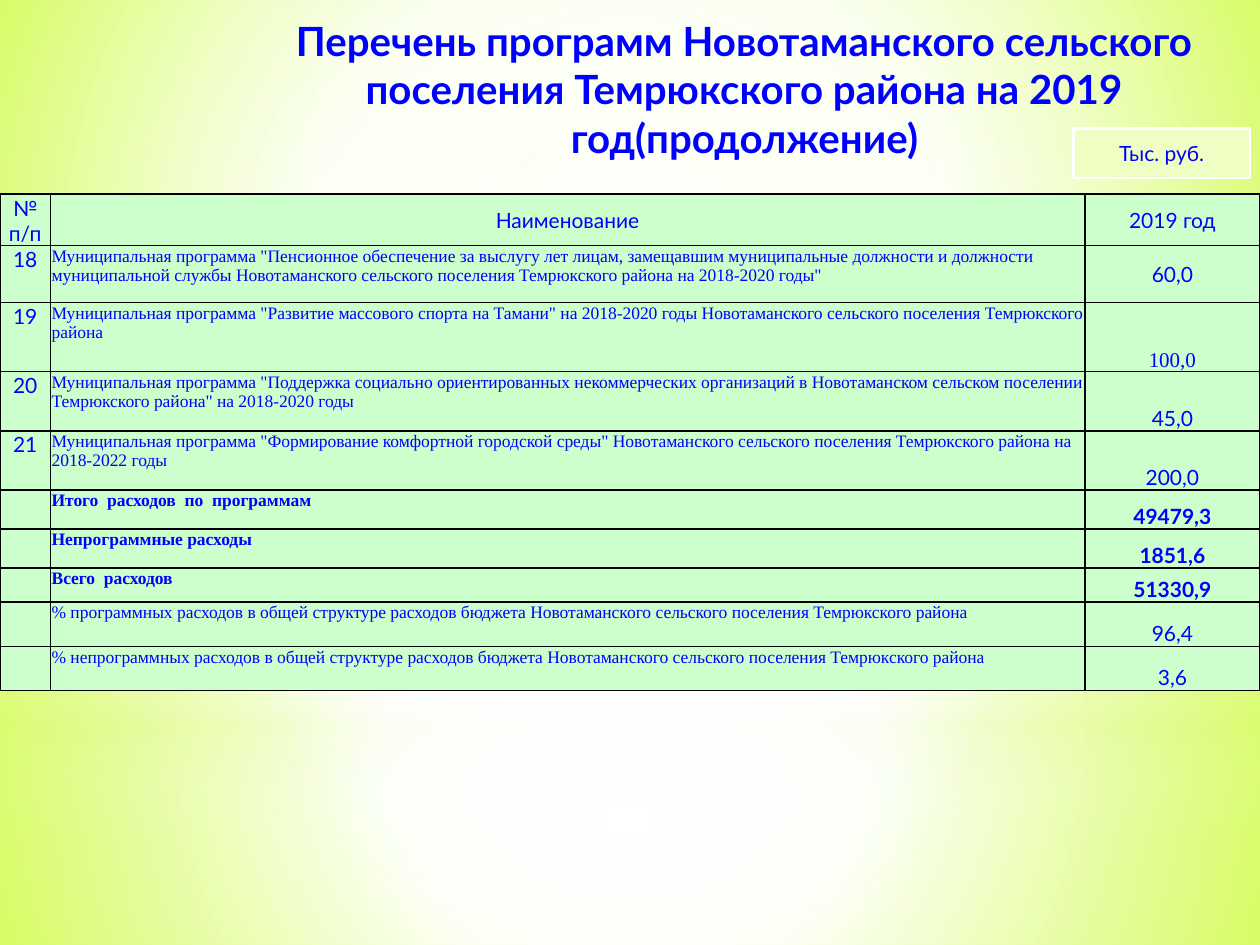
"""Build the slide listing the 2019 settlement programmes and their costs."""
from pptx import Presentation
from pptx.dml.color import RGBColor
from pptx.enum.shapes import MSO_SHAPE
from pptx.enum.text import MSO_ANCHOR, MSO_AUTO_SIZE, PP_ALIGN
from pptx.oxml import parse_xml
from pptx.oxml.ns import nsdecls
from pptx.util import Inches, Pt

BLUE = "0000FF"
WHITE = "FFFFFF"
LIME = "D8FC68"
MINT = "CCFFCC"


def color(value):
    return RGBColor.from_string(value)


def set_gradient(element, stops, focus=None):
    stop_xml = "".join(
        f'<a:gs pos="{position * 1000}"><a:srgbClr val="{value}">'
        f'<a:alpha val="{opacity * 1000}"/></a:srgbClr></a:gs>'
        for position, value, opacity in stops
    )
    if focus:
        left, top, right, bottom = (edge * 1000 for edge in focus)
        shade = (f'<a:path path="circle"><a:fillToRect l="{left}" t="{top}" '
                 f'r="{right}" b="{bottom}"/></a:path>')
    else:
        shade = '<a:lin ang="5400000" scaled="0"/>'
    solid = element.xpath(".//a:solidFill")[0]
    solid.getparent().replace(solid, parse_xml(
        f'<a:gradFill {nsdecls("a")} rotWithShape="1"><a:gsLst>{stop_xml}</a:gsLst>{shade}</a:gradFill>'))


presentation = Presentation()
presentation.slide_width = Inches(10)
presentation.slide_height = Inches(7.5)
slide = presentation.slides.add_slide(presentation.slide_layouts[5])
slide.background.fill.solid()
slide.background.fill.fore_color.rgb = color(WHITE)
set_gradient(slide.element,
             [(0, "D6FF5B", 100), (60, "F8FFE3", 100), (100, "C9FF25", 100)],
             (20, 10, 20, 60))

center = (50, 50, 50, 50)
band_stops = [(0, WHITE, 0), (29, WHITE, 30), (45, LIME, 40),
              (55, WHITE, 26), (65, LIME, 60), (100, WHITE, 0)]
for horizon, band_top, extra, glow_edge in [(5.58, 4.12, 0, 56), (4.23, 2.9, 1, 54)]:
    lower_stops = [(0, WHITE, 91 + extra), (37, WHITE, 76 + extra), (100, LIME, 79 + extra)]
    upper_stops = [(0, WHITE, 89 + extra), (48, WHITE, 62 + extra), (100, LIME, 79 + extra)]
    glow_stops = [(0, WHITE, 100), (glow_edge, WHITE, 0)]
    for kind, top, height, stops, focus in [
        (MSO_SHAPE.RECTANGLE, horizon, 7.5 - horizon, lower_stops, center),
        (MSO_SHAPE.RECTANGLE, 0, horizon, upper_stops, center),
        (MSO_SHAPE.RECTANGLE, band_top, 2.5, band_stops, None),
        (MSO_SHAPE.OVAL, 1.75, 5.58, glow_stops, center),
    ]:
        layer = slide.shapes.add_shape(kind, 0, Inches(top), Inches(10), Inches(height))
        layer.shadow.inherit = False
        layer.line.fill.background()
        layer.fill.solid()
        layer.fill.fore_color.rgb = color(WHITE)
        set_gradient(layer.element, stops, focus)

title = slide.shapes.title
slide.shapes.element.append(title.element)
title.left, title.top = Inches(2.09), Inches(0)
title.width, title.height = Inches(7.64), Inches(1.33)
title.text = "Перечень программ Новотаманского сельского поселения Темрюкского района на 2019 год(продолжение)"
title.text_frame.word_wrap = True
title.text_frame.auto_size = MSO_AUTO_SIZE.NONE
title.text_frame.vertical_anchor = MSO_ANCHOR.BOTTOM
paragraph = title.text_frame.paragraphs[0]
paragraph.alignment = PP_ALIGN.CENTER
paragraph.font.name = "Lato"
paragraph.font.size = Pt(23)
paragraph.font.bold = True
paragraph.font.color.rgb = color(BLUE)

rows = [
    (0.41, "№ п/п", "Наименование", "2019 год"),
    (0.45, "18", 'Муниципальная программа "Пенсионное обеспечение за выслугу лет лицам, замещавшим муниципальные должности и должности муниципальной службы Новотаманского сельского поселения Темрюкского района на 2018-2020 годы"', "60,0"),
    (0.55, "19", 'Муниципальная программа "Развитие массового спорта на Тамани" на 2018-2020 годы Новотаманского сельского поселения Темрюкского района', "100,0"),
    (0.47, "20", 'Муниципальная программа "Поддержка социально ориентированных некоммерческих организаций в Новотаманском сельском поселении Темрюкского района" на 2018-2020 годы', "45,0"),
    (0.47, "21", 'Муниципальная программа "Формирование комфортной городской среды" Новотаманского сельского поселения Темрюкского района на 2018-2022 годы', "200,0"),
    (0.31, "", "Итого  расходов  по  программам", "49479,3"),
    (0.31, "", "Непрограммные расходы", "1851,6"),
    (0.27, "", "Всего  расходов", "51330,9"),
    (0.35, "", "% программных расходов в общей структуре расходов бюджета Новотаманского сельского поселения Темрюкского района", "96,4"),
    (0.35, "", "% непрограммных расходов в общей структуре расходов бюджета Новотаманского сельского поселения Темрюкского района", "3,6"),
]
total_rows = (5, 6, 7)
serif_value_row = 2
table = slide.shapes.add_table(len(rows), 3, 0, Inches(1.54), Inches(10), Inches(3.94)).table
for column, width in zip(table.columns, (0.4, 8.21, 1.39)):
    column.width = Inches(width)

for row_index, (height, *texts) in enumerate(rows):
    table.rows[row_index].height = Inches(height)
    for column_index, text in enumerate(texts):
        is_name = row_index > 0 and column_index == 1
        is_value = column_index == 2
        cell = table.cell(row_index, column_index)
        cell.text = text
        cell.margin_left = cell.margin_top = cell.margin_right = Inches(0.01)
        cell.margin_bottom = 0
        if row_index == 0 or (row_index == 1 and is_value):
            cell.vertical_anchor = MSO_ANCHOR.MIDDLE
        else:
            cell.vertical_anchor = MSO_ANCHOR.BOTTOM if is_value else MSO_ANCHOR.TOP
        paragraph = cell.text_frame.paragraphs[0]
        paragraph.alignment = PP_ALIGN.LEFT if is_name else PP_ALIGN.CENTER
        is_serif = is_name or (is_value and row_index == serif_value_row)
        paragraph.font.name = "Times New Roman" if is_serif else "Lato"
        paragraph.font.size = Pt(10 if is_name else 12)
        paragraph.font.bold = row_index in total_rows
        paragraph.font.color.rgb = color(BLUE)
        properties = cell._tc.get_or_add_tcPr()
        for side in ("lnL", "lnR", "lnT", "lnB"):
            properties.append(parse_xml(
                f'<a:{side} {nsdecls("a")} w="12700"><a:solidFill>'
                f'<a:srgbClr val="000000"/></a:solidFill></a:{side}>'))
        cell.fill.solid()
        cell.fill.fore_color.rgb = color(MINT)

unit_label = slide.shapes.add_shape(
    MSO_SHAPE.RECTANGLE, Inches(8.52), Inches(1.02), Inches(1.4), Inches(0.39))
unit_label.shadow.inherit = False
unit_label.fill.solid()
unit_label.fill.fore_color.rgb = color("EFFEC3")
unit_label.line.color.rgb = color(WHITE)
unit_label.line.width = Pt(1.25)
unit_label.text_frame.text = "Тыс. руб."
unit_label.text_frame.vertical_anchor = MSO_ANCHOR.MIDDLE
paragraph = unit_label.text_frame.paragraphs[0]
paragraph.alignment = PP_ALIGN.CENTER
paragraph.font.name = "Lato"
paragraph.font.size = Pt(12)
paragraph.font.color.rgb = color(BLUE)

presentation.save("out.pptx")
